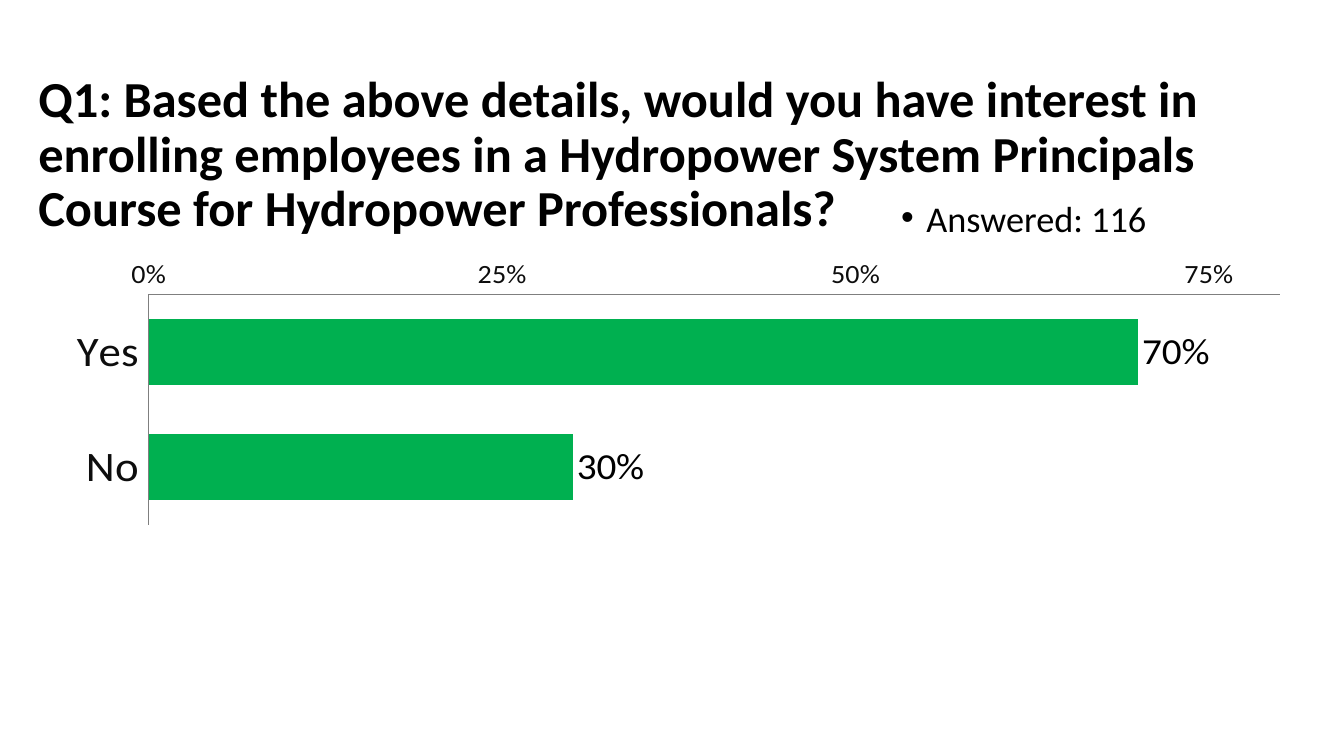
from typing import NamedTuple

from lxml import etree
from pptx import Presentation
from pptx.chart.data import CategoryChartData
from pptx.dml.color import RGBColor
from pptx.enum.chart import (XL_AXIS_CROSSES, XL_CHART_TYPE, XL_LABEL_POSITION,
                             XL_TICK_LABEL_POSITION, XL_TICK_MARK)
from pptx.enum.text import MSO_ANCHOR, MSO_AUTO_SIZE, PP_ALIGN
from pptx.oxml.ns import qn
from pptx.util import Emu, Pt

BAR_CLUSTERED = XL_CHART_TYPE.BAR_CLUSTERED
CROSS_MAXIMUM = XL_AXIS_CROSSES.MAXIMUM
LABELS_LOW = XL_TICK_LABEL_POSITION.LOW
LABELS_OUTSIDE = XL_LABEL_POSITION.OUTSIDE_END
NO_TICKS = XL_TICK_MARK.NONE
MIDDLE, TOP = MSO_ANCHOR.MIDDLE, MSO_ANCHOR.TOP
NO_AUTOFIT = MSO_AUTO_SIZE.NONE
LEFT = PP_ALIGN.LEFT

EMU_PER_PX = 9144  # 100 px to the inch
FONT = "Calibri"
COLORS = {"text": "000000", "axis_text": "0D0D0D", "axis_line": "7F7F7F", "bar": "00B050"}
ANSWERS = {"Yes": 0.7, "No": 0.3}
PLOT_AREA = {"x": 0.085, "y": 0.037, "w": 0.886, "h": 0.657}


class Frame(NamedTuple):
    left: int
    top: int
    width: int
    height: int

    def emu(self) -> list[Emu]:
        return [px(value) for value in self]


class TextSpec(NamedTuple):
    text: str
    size: float
    bold: bool
    line_spacing: float
    anchor: MSO_ANCHOR


TITLE_FRAME = Frame(28, 40, 1200, 229)
ANSWERED_FRAME = Frame(884, 202, 421, 44)
CHART_FRAME = Frame(40, 256, 1266, 371)

TITLE = TextSpec("Q1: Based the above details, would you have interest in enrolling employees "
                 "in a Hydropower System Principals Course for Hydropower Professionals?",
                 36, True, 0.9, MIDDLE)
ANSWERED = TextSpec("Answered: 116", 25.9, False, 0.7, TOP)


def px(value: int) -> Emu:
    return Emu(value * EMU_PER_PX)


def set_font(font, size: float, color: str, bold: bool = False) -> None:
    font.name = FONT
    font.size = Pt(size)
    font.bold = bold
    font.color.rgb = RGBColor.from_string(COLORS[color])


def add_bullet(paragraph) -> None:
    properties = paragraph._p.get_or_add_pPr()
    properties.set("marL", str(px(25)))
    properties.set("indent", str(-px(25)))
    etree.SubElement(properties, qn("a:buFont")).set("typeface", "Arial")
    etree.SubElement(properties, qn("a:buChar")).set("char", "•")


def write_text(shape, spec: TextSpec, bulleted: bool = False) -> None:
    frame = shape.text_frame
    frame.text = spec.text
    frame.word_wrap = True
    frame.auto_size = NO_AUTOFIT
    frame.vertical_anchor = spec.anchor
    paragraph = frame.paragraphs[0]
    if bulleted:
        add_bullet(paragraph)
    paragraph.alignment = LEFT
    paragraph.line_spacing = spec.line_spacing
    set_font(paragraph.font, spec.size, "text", spec.bold)


def format_axis(axis, size: float) -> None:
    axis.has_major_gridlines = False
    axis.major_tick_mark = axis.minor_tick_mark = NO_TICKS
    axis.format.line.width = Pt(0.75)
    axis.format.line.color.rgb = RGBColor.from_string(COLORS["axis_line"])
    set_font(axis.tick_labels.font, size, "axis_text")


def set_plot_area(chart) -> None:
    plot_area = chart._chartSpace.chart.plotArea
    for old_layout in plot_area.findall(qn("c:layout")):
        plot_area.remove(old_layout)
    layout = etree.Element(qn("c:layout"))
    plot_area.insert(0, layout)
    manual = etree.SubElement(layout, qn("c:manualLayout"))
    settings = {"layoutTarget": "inner", "xMode": "edge", "yMode": "edge", **PLOT_AREA}
    for name, value in settings.items():
        etree.SubElement(manual, qn(f"c:{name}")).set("val", str(value))


def add_answer_chart(slide) -> None:
    data = CategoryChartData(number_format="0%")
    data.categories = list(ANSWERS)
    data.add_series("Series 1", list(ANSWERS.values()))
    chart = slide.shapes.add_chart(BAR_CLUSTERED, *CHART_FRAME.emu(), data).chart
    chart.has_legend = chart.has_title = False
    set_font(chart.font, 18, "text")
    set_plot_area(chart)

    # Axes: first answer on top, percentages along the bottom
    category_axis, value_axis = chart.category_axis, chart.value_axis
    format_axis(category_axis, 32)
    category_axis.reverse_order = True
    category_axis.crosses = CROSS_MAXIMUM
    category_axis.tick_label_position = LABELS_LOW
    format_axis(value_axis, 20)
    value_axis.minimum_scale, value_axis.maximum_scale = 0, 0.8
    value_axis.major_unit = 0.25
    value_axis.tick_labels.number_format = "0%"
    value_axis.tick_labels.number_format_is_linked = False

    # Bars and their labels
    plot = chart.plots[0]
    plot.gap_width = 75
    plot.vary_by_categories = False
    fill = plot.series[0].format.fill
    fill.solid()
    fill.fore_color.rgb = RGBColor.from_string(COLORS["bar"])
    plot.has_data_labels = True
    labels = plot.data_labels
    labels.show_value = True
    labels.number_format = "0%"
    labels.number_format_is_linked = False
    labels.position = LABELS_OUTSIDE
    set_font(labels.font, 28, "text")


def main() -> None:
    presentation = Presentation()
    presentation.slide_width, presentation.slide_height = px(1333), px(750)
    slide = presentation.slides.add_slide(presentation.slide_layouts[5])

    # Question
    title = slide.shapes.title
    title.left, title.top, title.width, title.height = TITLE_FRAME.emu()
    write_text(title, TITLE)

    # Number of answers
    answered = slide.shapes.add_textbox(*ANSWERED_FRAME.emu())
    write_text(answered, ANSWERED, bulleted=True)

    # Results
    add_answer_chart(slide)
    presentation.save("out.pptx")


if __name__ == "__main__":
    main()
